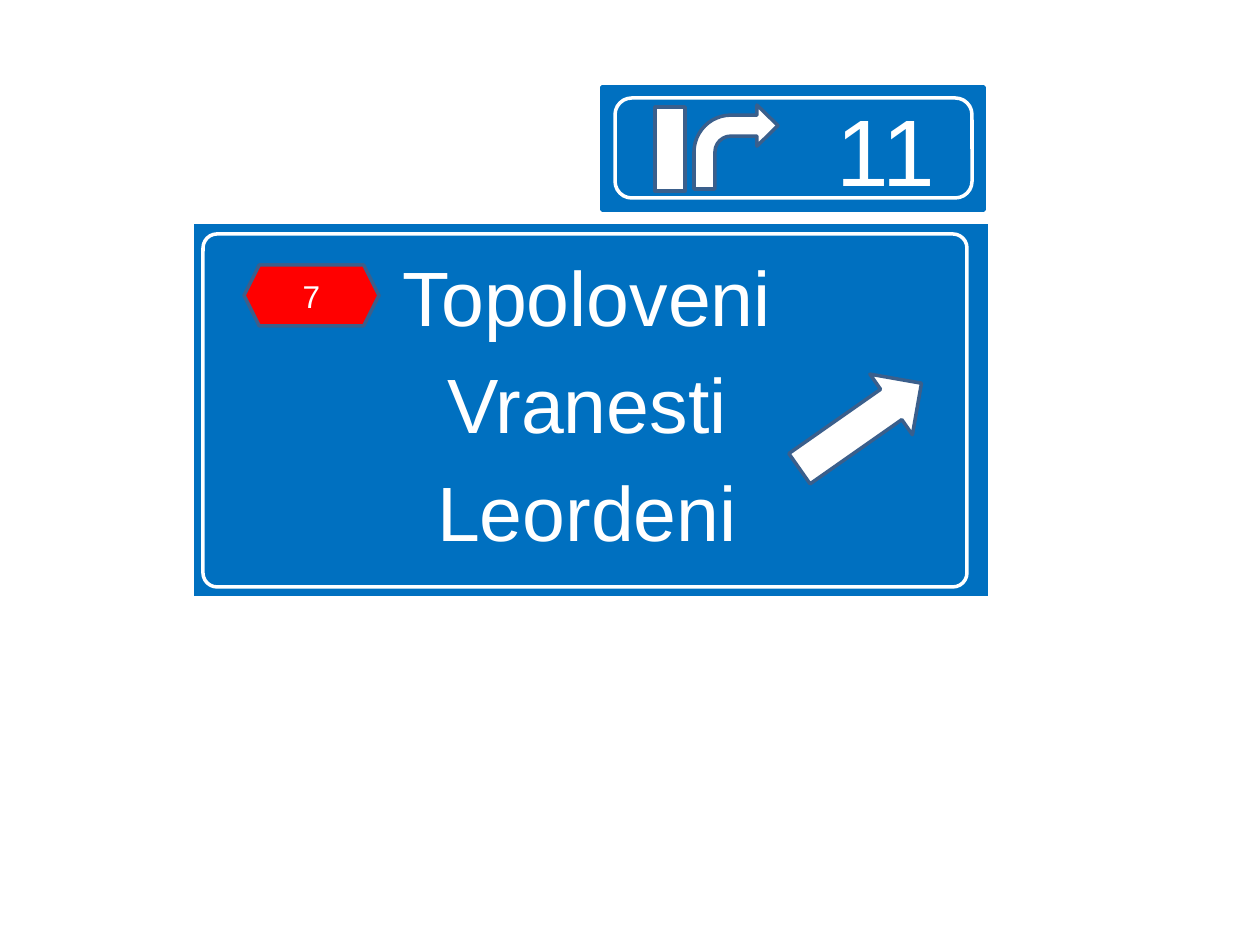
from pptx import Presentation
from pptx.dml.color import RGBColor
from pptx.enum.shapes import MSO_SHAPE
from pptx.enum.text import MSO_ANCHOR, MSO_AUTO_SIZE, PP_ALIGN
from pptx.util import Emu, Pt

RECTANGLE = MSO_SHAPE.RECTANGLE
ROUNDED = MSO_SHAPE.ROUNDED_RECTANGLE
RIGHT_ARROW = MSO_SHAPE.RIGHT_ARROW
BENT_ARROW = MSO_SHAPE.BENT_ARROW
HEXAGON = MSO_SHAPE.HEXAGON
TOP, MIDDLE = MSO_ANCHOR.TOP, MSO_ANCHOR.MIDDLE
CENTER = PP_ALIGN.CENTER
NO_FIT = MSO_AUTO_SIZE.NONE

PX_PER_INCH = 126
BLUE, WHITE, RED, OUTLINE = "0070C0", "FFFFFF", "FF0000", "3A5F8C"
FONT = "Arial"


def px(length):
    """Turn pixels into EMU."""
    return Emu(round(length * 914400 / PX_PER_INCH))


def color(value):
    """Turn a hex string into a colour."""
    return RGBColor.from_string(value)


def place(shape, box):
    """Move and size a shape to a pixel box."""
    shape.left, shape.top, shape.width, shape.height = map(px, box)


def inside(box, left, top, width, height):
    """Return a box given relative to the corner of another."""
    return box[0] + left, box[1] + top, width, height


def write(shape, text, size, anchor=MIDDLE, insets=(13, 6, 13, 6)):
    """Write centred white lines in a shape."""
    frame = shape.text_frame
    frame.word_wrap = True
    frame.auto_size = NO_FIT
    frame.vertical_anchor = anchor
    (frame.margin_left, frame.margin_top,
     frame.margin_right, frame.margin_bottom) = map(px, insets)
    for index, line in enumerate(text.split("\n")):
        para = frame.add_paragraph() if index else frame.paragraphs[0]
        para.alignment = CENTER
        span = para.add_run()
        span.text = line
        span.font.name = FONT
        span.font.size = Pt(size)
        span.font.color.rgb = color(WHITE)


def add_shape(page, kind, box, fill=None, line=OUTLINE, adjustments=(), rotation=0):
    """Add a preset shape with a flat fill and a thin outline."""
    shape = page.shapes.add_shape(kind, *map(px, box))
    shape.shadow.inherit = False
    if fill:
        shape.fill.solid()
        shape.fill.fore_color.rgb = color(fill)
    else:
        shape.fill.background()
    shape.line.color.rgb = color(line)
    shape.line.width = Pt(2)
    for index, value in enumerate(adjustments):
        shape.adjustments[index] = value
    shape.rotation = rotation
    return shape


def add_destinations(page, panel, box):
    """Build the large panel with its towns, route badge and slanted arrow."""
    place(panel, box)
    panel.fill.solid()
    panel.fill.fore_color.rgb = color(BLUE)
    write(panel, "Topoloveni\nVranesti\nLeordeni", 44, anchor=TOP, insets=(5, 25, 13, 30))
    add_shape(page, RIGHT_ARROW, inside(box, 592, 165, 149, 74), WHITE, rotation=325)
    add_shape(page, ROUNDED, inside(box, 9, 10, 764, 353), line=WHITE, adjustments=[0.04])
    badge = add_shape(page, HEXAGON, inside(box, 50, 41, 135, 61), RED)
    write(badge, "7", 18)


def add_exit(page, box):
    """Build the exit panel with its number, road bar and bent arrow."""
    panel = add_shape(page, ROUNDED, box, BLUE, BLUE, adjustments=[0])
    write(panel, "11", 54, insets=(198, 6, 13, 6))
    add_shape(page, RECTANGLE, inside(box, 53, 20, 30, 84), WHITE)
    add_shape(page, BENT_ARROW, inside(box, 92, 18, 84, 84), WHITE,
              adjustments=[0.25, 0.245, 0.25, 0.44])
    add_shape(page, ROUNDED, inside(box, 13, 11, 357, 100), line=WHITE)


def main():
    """Build the road sign slide."""
    deck = Presentation()
    deck.slide_width, deck.slide_height = px(1260), px(945)
    page = deck.slides.add_slide(deck.slide_layouts[0])
    title = page.shapes.title.element
    title.getparent().remove(title)
    add_destinations(page, page.placeholders[1], (194, 224, 794, 372))
    add_exit(page, (602, 87, 382, 123))
    deck.save("out.pptx")


if __name__ == "__main__":
    main()
